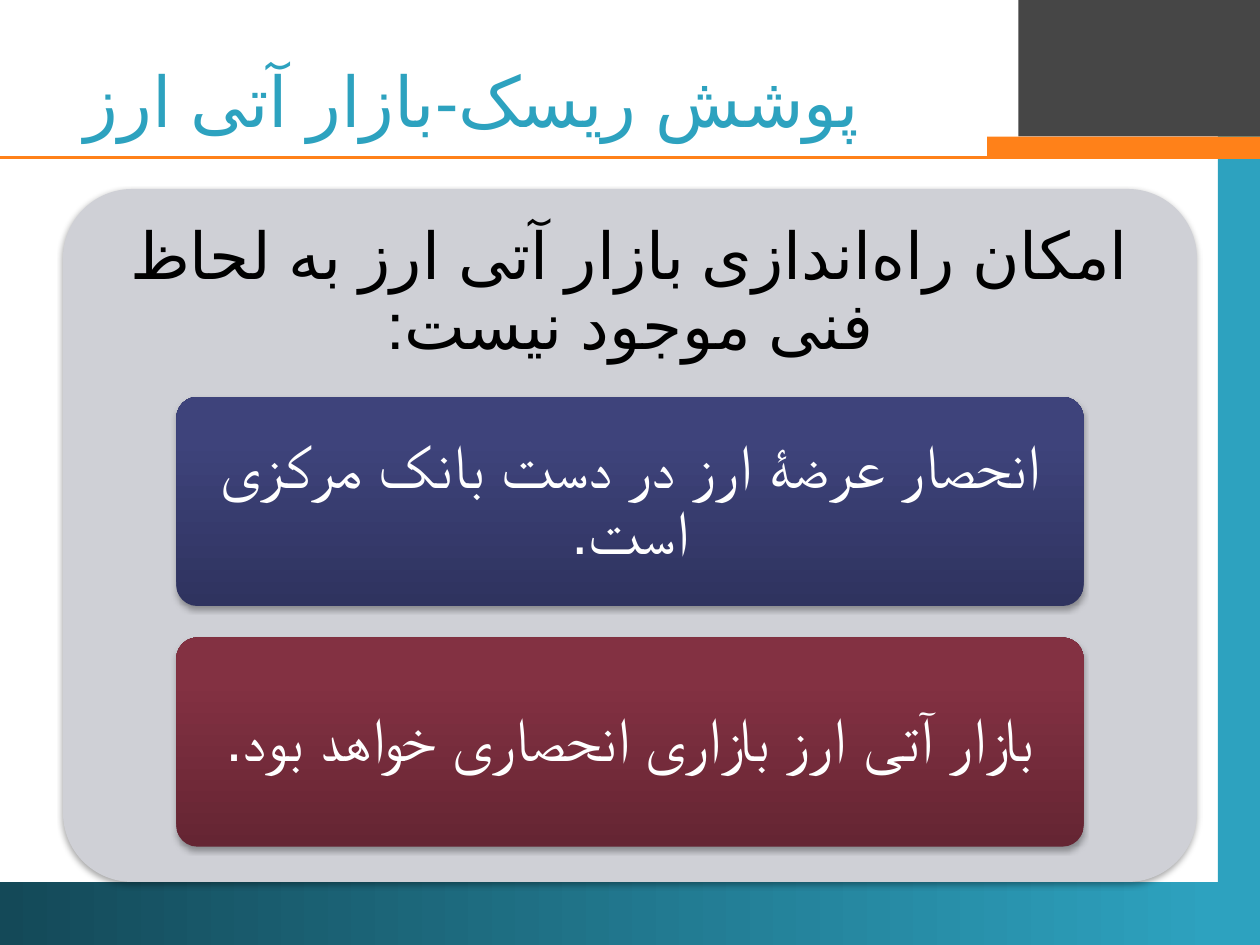
from lxml.etree import SubElement
from pptx import Presentation
from pptx.dml.color import RGBColor
from pptx.enum.shapes import MSO_CONNECTOR, MSO_SHAPE
from pptx.enum.text import MSO_ANCHOR, PP_ALIGN
from pptx.oxml.ns import qn
from pptx.util import Pt

FONT = "Arial"
ORANGE, TEAL = "FF8119", "2DA2BF"
NON_JOINER = chr(0x200C)
TITLE = "پوشش ریسک-بازار آتی ارز"
HEADING = NON_JOINER.join(["امکان راه", "اندازی بازار آتی ارز به لحاظ فنی موجود نیست:"])
REASONS = [
    ("انحصار عرضۀ ارز در دست بانک مرکزی است.", ("2F335F", "3E437B")),
    ("بازار آتی ارز بازاری انحصاری خواهد بود.", ("652533", "833142")),
]
BANDS = [
    ((696, 18, 24, 522), (TEAL,)),
    ((0, 504, 696, 36), ("144958", TEAL)),
    ((582, 0, 138, 78), ("464646",)),
    ((564, 78, 156, 12), (ORANGE,)),
]
PANEL = (36, 108, 648, 396)
REASON_LEFT, REASON_TOP, REASON_WIDTH, REASON_HEIGHT = 100.8, 226.8, 518.4, 119.5
REASON_STEP = 137.5


def color(value):
    return RGBColor.from_string(value)


def add_box(kind, box, colors, angle=0, last_stop=1):
    shape = slide.shapes.add_shape(kind, *map(Pt, box))
    shape.shadow.inherit = False
    shape.line.fill.background()
    if len(colors) == 1:
        shape.fill.solid()
        shape.fill.fore_color.rgb = color(colors[0])
    else:
        shape.fill.gradient()
        shape.fill.gradient_angle = angle
        for stop, value, position in zip(shape.fill.gradient_stops, colors, (0, last_stop)):
            stop.color.rgb = color(value)
            stop.position = position
    return shape


def add_card(box, colors):
    shape = add_box(MSO_SHAPE.ROUNDED_RECTANGLE, box, colors, 90, 0.8)
    shape.adjustments[0] = 0.1
    effects = shape._element.spPr.find(qn("a:effectLst"))
    shadow = SubElement(effects, qn("a:outerShdw"), blurRad=str(Pt(3.1)),
                        dist=str(Pt(1.8)), dir="5400000", rotWithShape="0")
    black = SubElement(shadow, qn("a:srgbClr"), val="000000")
    SubElement(black, qn("a:alpha"), val="35000")
    return shape


def write(shape, text, size, value, margins, spacing=0.9):
    frame = shape.text_frame
    frame.word_wrap = True
    frame.vertical_anchor = MSO_ANCHOR.MIDDLE
    frame.margin_left = frame.margin_right = Pt(margins[0])
    frame.margin_top, frame.margin_bottom = Pt(margins[1]), Pt(margins[2])
    paragraph = frame.paragraphs[0]
    paragraph.text = text
    paragraph.alignment = PP_ALIGN.CENTER
    paragraph.line_spacing = spacing
    paragraph.font.size = Pt(size)
    paragraph.font.name = FONT
    paragraph.font.color.rgb = color(value)
    paragraph._p.get_or_add_pPr().set("rtl", "1")
    for run in paragraph.runs:
        properties = run._r.get_or_add_rPr()
        properties.set("lang", "fa-IR")
        SubElement(properties, qn("a:cs"), typeface=FONT)


presentation = Presentation()
presentation.slide_width, presentation.slide_height = Pt(720), Pt(540)
slide = presentation.slides.add_slide(presentation.slide_layouts[5])

for box, colors in BANDS:
    add_box(MSO_SHAPE.RECTANGLE, box, colors)
rule = slide.shapes.add_connector(MSO_CONNECTOR.STRAIGHT, Pt(720), Pt(90), Pt(0), Pt(90))
rule.line.color.rgb = color(ORANGE)
rule.line.width = Pt(2.25)
SubElement(rule._element.spPr, qn("a:effectLst"))

title = slide.shapes.title
title.left, title.top, title.width, title.height = Pt(0), Pt(36), Pt(540), Pt(42)
write(title, TITLE, 40, TEAL, (7.2, 3.6, 3.6), spacing=1)

panel = add_card(PANEL, ("CFD0D6",))
write(panel, HEADING, 37, "000000", (0, 0, 276))
for index, (text, colors) in enumerate(REASONS):
    top = REASON_TOP + index * REASON_STEP
    card = add_card((REASON_LEFT, top, REASON_WIDTH, REASON_HEIGHT), colors)
    write(card, text, 35, "FFFFFF", (3.7, 1.5, 1.5))

presentation.save("out.pptx")
